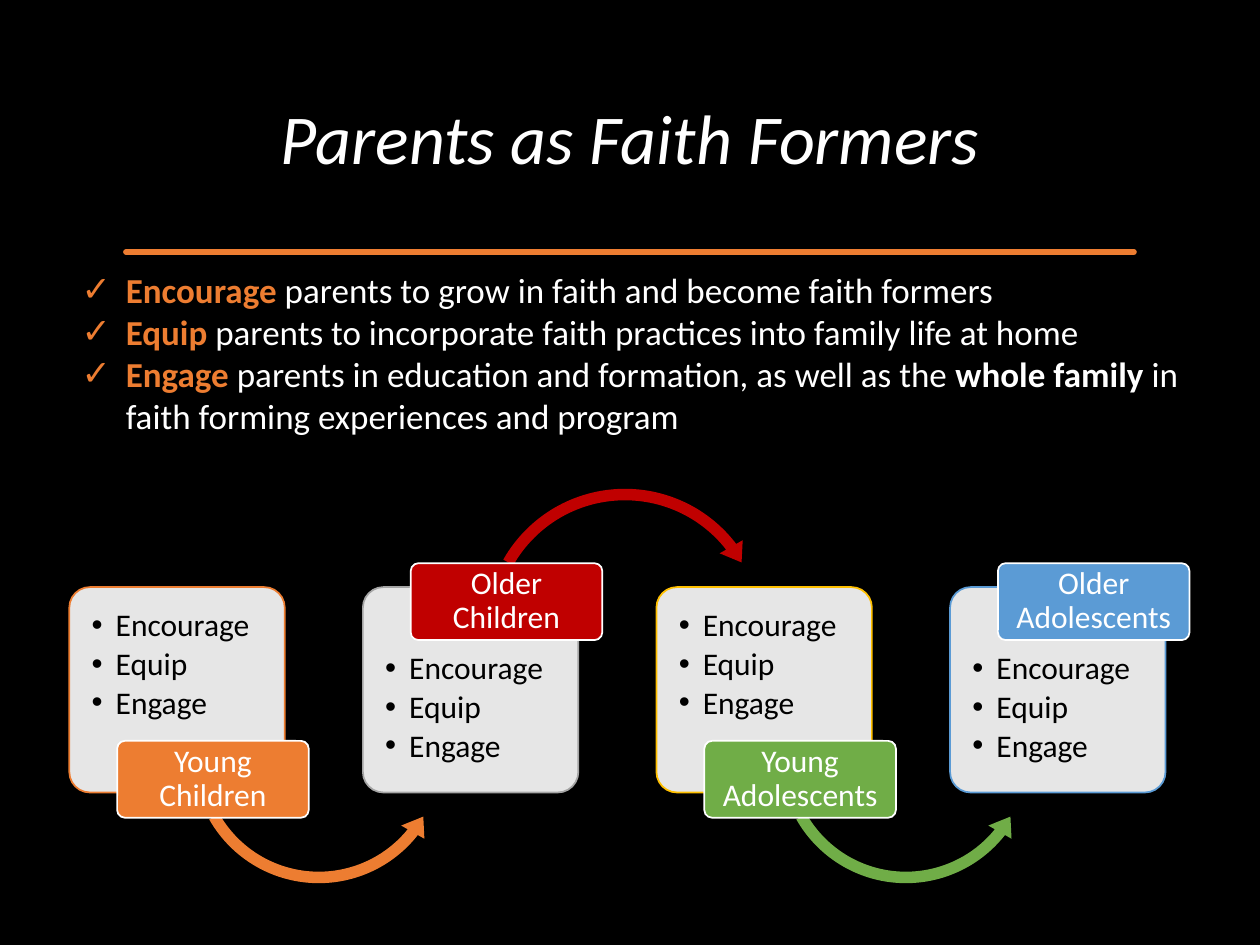
from dataclasses import dataclass
from typing import Optional

from lxml import etree
from pptx import Presentation
from pptx.dml.color import RGBColor
from pptx.enum.shapes import MSO_SHAPE
from pptx.enum.text import MSO_ANCHOR, PP_ALIGN
from pptx.oxml.ns import qn
from pptx.util import Inches, Pt

ROUNDED = MSO_SHAPE.ROUNDED_RECTANGLE
ARC_OVER = MSO_SHAPE.CIRCULAR_ARROW
ARC_UNDER = MSO_SHAPE.LEFT_CIRCULAR_ARROW
CENTER, LEFT = PP_ALIGN.CENTER, PP_ALIGN.LEFT
MIDDLE, TOP = MSO_ANCHOR.MIDDLE, MSO_ANCHOR.TOP

FONT = "Calibri"
ORANGE, WHITE, BLACK = "ED7D31", "FFFFFF", "000000"
STEPS = ("Encourage", "Equip", "Engage")
STAGE_LEFT, STAGE_PITCH = 0.55, 2.33
RULE_TOP, RULE_BOTTOM = 1.83, 1.85


@dataclass
class Arc:
    kind: MSO_SHAPE
    offset: float
    top: float
    size: float
    adjustments: tuple[float, ...]


@dataclass
class Stage:
    label: str
    color: str
    border: str
    label_on_top: bool
    arc: Optional[Arc]


@dataclass
class Span:
    text: str
    color: str = WHITE
    bold: bool = False


UNDER = Arc(ARC_UNDER, 0.92, 4.95, 2.12, (0.043, 5.369, 23.125, 90.246, 0.05))
OVER = Arc(ARC_OVER, 0.91, 3.82, 2.34, (0.039, 4.821, 193.425, 125.756, 0.045))

STAGES = [
    Stage("Young Children", ORANGE, ORANGE, False, UNDER),
    Stage("Older Children", "C00000", "A5A5A5", True, OVER),
    Stage("Young Adolescents", "70AD47", "FFC000", False, UNDER),
    Stage("Older Adolescents", "5B9BD5", "5B9BD5", True, None),
]

GOALS = [
    [Span("Encourage", ORANGE, True),
     Span(" parents to grow in faith and become faith formers")],
    [Span("Equip", ORANGE, True),
     Span(" parents to incorporate faith practices into family life at home")],
    [Span("Engage", ORANGE, True),
     Span(" parents in education and formation, as well as the "),
     Span("whole family ", bold=True),
     Span("in faith forming experiences and program")],
]

UPPER_EDGE = [
    (0.64, 1.84, 0.89, 1.81, 1.02), (1.14, 1.87, 1.6, 1.87, 1.85),
    (2.13, 1.85, 2.16, 1.84, 2.33), (2.54, 1.84, 2.68, 1.77, 2.98),
    (3.31, 1.85, 3.52, 1.85, 3.9), (4.31, 1.84, 4.28, 1.87, 4.64),
    (5.03, 1.82, 5.2, 1.8, 5.47), (5.73, 1.85, 5.88, 1.84, 6.13),
    (6.41, 1.82, 6.51, 1.84, 6.87), (7.21, 1.82, 7.41, 1.84, 7.79),
    (8.17, 1.87, 8.19, 1.86, 8.35), (8.55, 1.86, 9.13, 1.83, 9.45),
]
LOWER_EDGE = [
    (9.2, 1.81, 8.95, 1.86, 8.8), (8.63, 1.85, 8.45, 1.83, 8.32),
    (8.22, 1.86, 7.77, 1.88, 7.58), (7.43, 1.8, 7.27, 1.86, 7.02),
    (6.76, 1.89, 6.5, 1.87, 6.28), (6.07, 1.85, 5.7, 1.89, 5.53),
    (5.32, 1.83, 5.08, 1.81, 4.79), (4.5, 1.86, 4.35, 1.84, 4.05),
    (3.74, 1.87, 3.56, 1.83, 3.4), (3.23, 1.87, 2.71, 1.88, 2.57),
    (2.38, 1.83, 2.06, 1.83, 1.82), (1.56, 1.89, 0.91, 1.89, 0.55),
]


def rgb(color: str) -> RGBColor:
    return RGBColor.from_string(color)


def style_font(font, size: float, color: str) -> None:
    font.name = FONT
    font.size = Pt(size)
    font.color.rgb = rgb(color)


def set_insets(frame, left: float, top: float, right: float, bottom: float) -> None:
    frame.margin_left, frame.margin_top = Inches(left), Inches(top)
    frame.margin_right, frame.margin_bottom = Inches(right), Inches(bottom)


def add_bullet(para, char: str, indent: float, color: str) -> None:
    properties = para._p.get_or_add_pPr()
    properties.set("marL", str(Inches(indent)))
    properties.set("indent", str(-Inches(indent)))
    bullet_color = etree.SubElement(properties, qn("a:buClr"))
    etree.SubElement(bullet_color, qn("a:srgbClr"), val=color)
    etree.SubElement(properties, qn("a:buFont"), typeface="Arial")
    etree.SubElement(properties, qn("a:buChar"), char=char)


def add_block(page, kind, left: float, top: float, width: float, height: float,
              fill: str, line: Optional[str] = None):
    block = page.shapes.add_shape(
        kind, Inches(left), Inches(top), Inches(width), Inches(height))
    block.shadow.inherit = False
    block.fill.solid()
    block.fill.fore_color.rgb = rgb(fill)
    if line:
        block.line.color.rgb = rgb(line)
        block.line.width = Pt(1)
    else:
        block.line.fill.background()
    return block


def edge_points(start: float, level: float, curves: list, steps: int = 8) -> list:
    points = []
    for x1, y1, x2, y2, end in curves:
        for step in range(1, steps + 1):
            t = step / steps
            u = 1 - t
            weights = (u ** 3, 3 * u * u * t, 3 * u * t * t, t ** 3)
            points.append((
                sum(w * x for w, x in zip(weights, (start, x1, x2, end))),
                sum(w * y for w, y in zip(weights, (level, y1, y2, level)))))
        start = end
    return points


def draw_rule(page) -> None:
    points = edge_points(0.55, RULE_TOP, UPPER_EDGE) + [(9.45, RULE_BOTTOM)]
    points += edge_points(9.45, RULE_BOTTOM, LOWER_EDGE)
    builder = page.shapes.build_freeform(0.55, RULE_TOP, scale=Inches(1))
    builder.add_line_segments(points, close=True)
    rule = builder.convert_to_shape()
    rule.shadow.inherit = False
    rule.fill.background()
    rule.line.color.rgb = rgb(ORANGE)
    rule.line.width = Pt(3.25)


def draw_card(page, left: float, stage: Stage) -> None:
    card = add_block(page, ROUNDED, left, 4.66, 1.71, 1.63, WHITE, stage.border)
    card.adjustments[0] = 0.1
    fill_color = card._element.spPr.find(qn("a:solidFill"))[0]
    etree.SubElement(fill_color, qn("a:alpha"), val="90000")
    frame = card.text_frame
    frame.word_wrap = True
    frame.vertical_anchor = TOP
    set_insets(frame, 0.13, 0.47 if stage.label_on_top else 0.13, 0.13, 0.13)
    for index, step in enumerate(STEPS):
        para = frame.add_paragraph() if index else frame.paragraphs[0]
        para.text = step
        para.alignment = LEFT
        para.line_spacing = 0.9
        para.space_after = Pt(2.7)
        style_font(para.font, 18, BLACK)
        add_bullet(para, "•", 0.19, BLACK)


def draw_label(page, left: float, stage: Stage) -> None:
    top = 4.47 if stage.label_on_top else 5.88
    label = add_block(page, ROUNDED, left, top, 1.52, 0.61, stage.color, WHITE)
    label.adjustments[0] = 0.1
    frame = label.text_frame
    frame.word_wrap = True
    frame.vertical_anchor = MIDDLE
    set_insets(frame, 0.04, 0.03, 0.04, 0.03)
    para = frame.paragraphs[0]
    para.text = stage.label
    para.alignment = CENTER
    para.line_spacing = 0.9
    style_font(para.font, 18, WHITE)


def draw_stage(page, left: float, stage: Stage) -> None:
    draw_card(page, left, stage)
    if stage.arc:
        arc = stage.arc
        arrow = add_block(page, arc.kind, left + arc.offset, arc.top,
                          arc.size, arc.size, stage.color)
        for index, value in enumerate(arc.adjustments):
            arrow.adjustments[index] = value
    draw_label(page, left + 0.38, stage)


def draw_title(page) -> None:
    title = page.shapes.title
    title.left, title.top = Inches(0.69), Inches(0.4)
    title.width, title.height = Inches(8.62), Inches(1.45)
    title.text_frame.vertical_anchor = MIDDLE
    para = title.text_frame.paragraphs[0]
    para.text = "Parents as Faith Formers"
    para.alignment = CENTER
    para.line_spacing = 0.9
    para.font.italic = True
    style_font(para.font, 40, WHITE)


def draw_goals(page) -> None:
    box = page.shapes.add_textbox(Inches(0.55), Inches(2.08), Inches(8.9), Inches(1.75))
    frame = box.text_frame
    frame.word_wrap = True
    for index, goal in enumerate(GOALS):
        para = frame.add_paragraph() if index else frame.paragraphs[0]
        add_bullet(para, "✓", 0.35, ORANGE)
        for span in goal:
            run = para.add_run()
            run.text = span.text
            run.font.bold = span.bold
            style_font(run.font, 20, span.color)


def main() -> None:
    deck = Presentation()
    deck.slide_width, deck.slide_height = Inches(10), Inches(7.5)
    page = deck.slides.add_slide(deck.slide_layouts.get_by_name("Title Only"))
    page.background.fill.solid()
    page.background.fill.fore_color.rgb = rgb(BLACK)
    draw_title(page)
    draw_rule(page)
    for index, stage in enumerate(STAGES):
        draw_stage(page, STAGE_LEFT + index * STAGE_PITCH, stage)
    draw_goals(page)
    deck.save("out.pptx")


if __name__ == "__main__":
    main()
